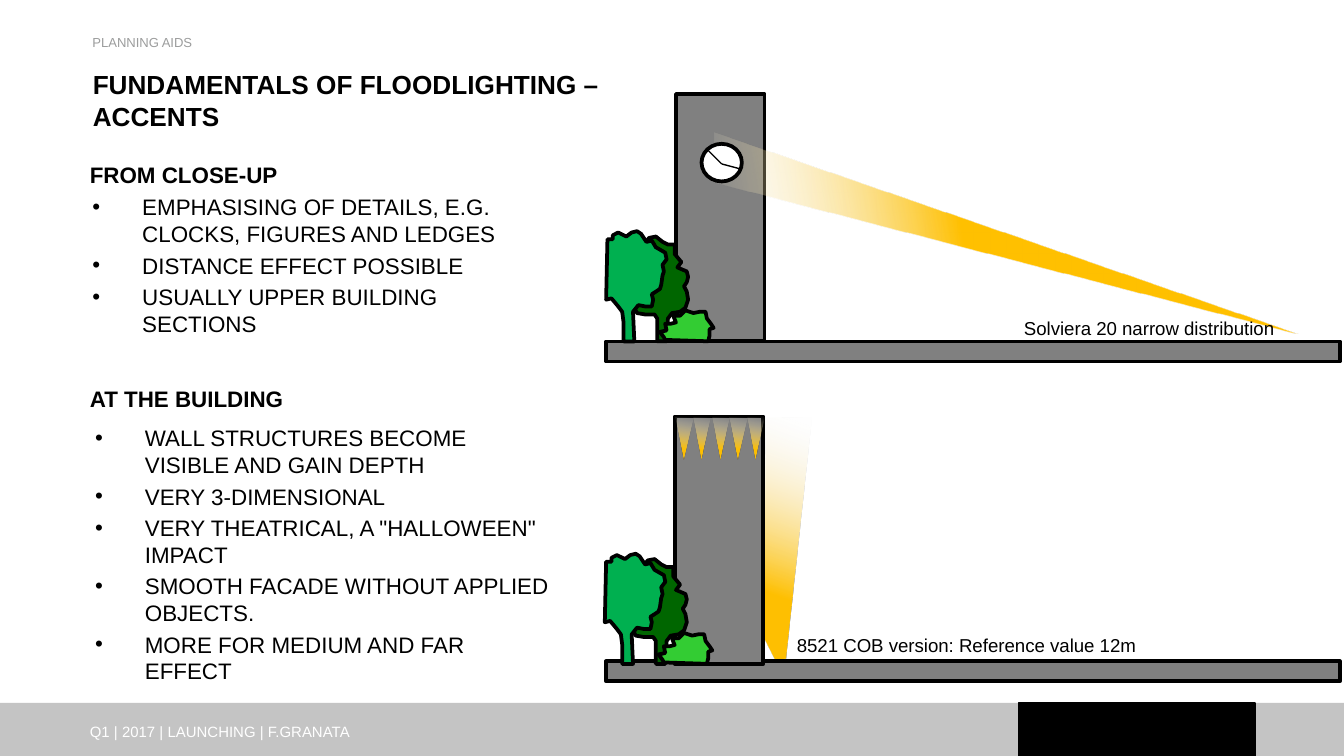
"""Build a slide on floodlighting accents with two lit tower scenes."""
from lxml.etree import SubElement
from pptx import Presentation
from pptx.dml.color import RGBColor
from pptx.enum.shapes import MSO_CONNECTOR, MSO_SHAPE
from pptx.enum.text import MSO_ANCHOR, PP_ALIGN
from pptx.oxml.ns import qn
from pptx.util import Inches, Pt

BLACK = RGBColor(0x00, 0x00, 0x00)
WHITE = RGBColor(0xFF, 0xFF, 0xFF)
FOOTER_GREY = RGBColor(0xC4, 0xC4, 0xC4)
HEADER_GREY = RGBColor(0x9C, 0x9D, 0x9D)
STONE = RGBColor(0x80, 0x80, 0x80)
DARK_GREEN = RGBColor(0x00, 0x66, 0x00)
BUSH_GREEN = RGBColor(0x33, 0xCC, 0x33)
TREE_GREEN = RGBColor(0x00, 0xB0, 0x50)
GOLD = RGBColor(0xFF, 0xC0, 0x00)
HAZE = RGBColor(0xF2, 0xF2, 0xF2)
HUNDREDTH = Inches(0.01)

DARK_TREE = [
    (496, 254), (497, 237), (500, 233), (506, 232), (510, 229), (512, 223),
    (511, 217), (509, 213), (511, 210), (512, 206), (511, 202), (504, 199),
    (507, 195), (502, 189), (502, 182), (497, 182), (493, 180), (488, 176),
    (483, 177), (478, 183), (469, 187), (466, 196), (467, 205), (463, 208),
    (468, 222), (474, 233), (480, 234), (487, 234), (489, 237), (489, 254),
]
BUSH = [
    (527, 254), (528, 250), (528, 245), (531, 244), (529, 241), (526, 237),
    (525, 232), (521, 232), (516, 233), (510, 231), (506, 235), (501, 235),
    (503, 240), (499, 241), (495, 241), (496, 246), (491, 247), (494, 251),
    (495, 253),
]
LIGHT_TREE = [
    (464, 254), (472, 254), (471, 232), (475, 227), (480, 228), (485, 228),
    (486, 223), (485, 219), (491, 215), (492, 212), (493, 205), (494, 202),
    (493, 197), (496, 193), (495, 188), (488, 184), (485, 179), (481, 180),
    (477, 174), (474, 172), (470, 173), (466, 176), (460, 173), (456, 175),
    (456, 178), (452, 178), (451, 223), (455, 222), (460, 228), (463, 232),
    (464, 240),
]

prs = Presentation()
prs.slide_width, prs.slide_height = Inches(10), Inches(10 * 9 / 16)
slide = prs.slides.add_slide(prs.slide_layouts[5])
shapes = slide.shapes


def paint(shape, color, line_width=2):
    shape.shadow.inherit = False
    shape.fill.solid()
    shape.fill.fore_color.rgb = color
    if line_width:
        shape.line.color.rgb = BLACK
        shape.line.width = Pt(line_width)
    else:
        shape.line.fill.background()


def add_beam(points, gold_end, angle):
    builder = shapes.build_freeform(*points[0], scale=HUNDREDTH)
    builder.add_line_segments(points[1:])
    beam = builder.convert_to_shape()
    beam.shadow.inherit = False
    beam.line.fill.background()
    beam.fill.gradient()
    beam.fill.gradient_angle = angle
    for stop, color, position in zip(beam.fill.gradient_stops, (GOLD, HAZE), (gold_end, 1)):
        stop.color.rgb = color
        stop.position = position
    haze = beam._element.spPr.findall(".//" + qn("a:srgbClr"))[-1]
    SubElement(haze, qn("a:alpha")).set("val", "0")


footer_band = shapes.add_shape(
    MSO_SHAPE.RECTANGLE, Inches(0), Inches(5.23), Inches(10), Inches(0.42))
paint(footer_band, FOOTER_GREY, 0)
footer_block = shapes.add_shape(
    MSO_SHAPE.RECTANGLE, Inches(7.58), Inches(5.23), Inches(1.76), Inches(0.4))
paint(footer_block, BLACK, 0.75)

add_beam([(577, 491), (585, 490), (604, 311), (570, 311), (569, 475)], 0.26, 70)

for shift_x, shift_y, ground_top in [(-1, 240, 4.92), (0, 0, 2.54)]:
    ground = shapes.add_shape(
        MSO_SHAPE.RECTANGLE, Inches(4.51), Inches(ground_top), Inches(5.46), Inches(0.15))
    paint(ground, STONE)
    tower = shapes.add_shape(
        MSO_SHAPE.RECTANGLE, Inches(5.03) + shift_x * HUNDREDTH,
        Inches(0.7) + shift_y * HUNDREDTH, Inches(0.66), Inches(1.84))
    paint(tower, STONE)
    for outline, green in [
        (DARK_TREE, DARK_GREEN), (BUSH, BUSH_GREEN), (LIGHT_TREE, TREE_GREEN),
    ]:
        moved = [(x + shift_x, y + shift_y) for x, y in outline]
        builder = shapes.build_freeform(*moved[0], scale=HUNDREDTH)
        builder.add_line_segments(moved[1:])
        paint(builder.convert_to_shape(), green)

add_beam([(966, 248), (532, 136), (532, 99)], 0.57, 190)
for cone in range(5):
    left = round(503 + 13.25 * cone)
    add_beam([(left + 6, 342), (left, 311), (left + 13, 311)], 0.26, 80)

clock = shapes.add_shape(
    MSO_SHAPE.OVAL, Inches(5.22), Inches(1.07), Inches(0.3), Inches(0.28))
paint(clock, WHITE)
for tip_x, tip_y in [(5.52, 1.26), (5.26, 1.11)]:
    hand = shapes.add_connector(
        MSO_CONNECTOR.STRAIGHT, Inches(5.37), Inches(1.22), Inches(tip_x), Inches(tip_y))
    hand.line.color.rgb = BLACK
    hand.line.width = Pt(0.75)
    SubElement(hand._element.spPr, qn("a:effectLst"))

title = shapes.title
title.left, title.top = Inches(0.59), Inches(0.46)
title.width, title.height = Inches(8.74), Inches(0.94)
title.text_frame.word_wrap = True
title.text_frame.vertical_anchor = MSO_ANCHOR.TOP
heading = title.text_frame.paragraphs[0]
heading.alignment = PP_ALIGN.LEFT
for position, words in enumerate(["FUNDAMENTALS OF FLOODLIGHTING –", "ACCENTS"]):
    if position:
        heading.add_line_break()
    run = heading.add_run()
    run.text = words
    run.font.name, run.font.size, run.font.bold = "Arial", Pt(14), True
    run.font.color.rgb = BLACK

for left, top, width, height, size, color, bold, words in [
    (0.57, 5.33, 2.85, 0.16, 8, WHITE, False, "Q1 | 2017 | LAUNCHING | F.GRANATA"),
    (0.59, 0.21, 8.74, 0.24, 7, HEADER_GREY, False, "PLANNING AIDS"),
    (0.57, 1.15, 3.6, 0.3, 12, BLACK, True, "FROM CLOSE-UP"),
    (0.57, 2.82, 3.6, 0.3, 12, BLACK, True, "AT THE BUILDING"),
    (7.52, 2.31, 2.28, 0.27, 10, BLACK, False, "Solviera 20 narrow distribution"),
    (5.83, 4.67, 3.19, 0.27, 10, BLACK, False, "8521 COB version: Reference value 12m"),
]:
    label = shapes.add_textbox(Inches(left), Inches(top), Inches(width), Inches(height))
    label.text_frame.word_wrap = True
    run = label.text_frame.paragraphs[0].add_run()
    run.text = words
    run.font.name, run.font.size, run.font.bold = "Arial", Pt(size), bold
    run.font.color.rgb = color

for left, top, width, height, points in [
    (0.59, 1.39, 3.63, 1.23, [
        "Emphasising of details, e.g. clocks, figures and ledges",
        "Distance effect possible",
        "Usually upper building sections",
    ]),
    (0.61, 3.11, 3.6, 1.67, [
        "Wall structures become visible and gain depth",
        "Very 3-dimensional",
        'Very theatrical, a "Halloween" impact',
        "Smooth facade without applied objects.",
        "More for medium and far effect",
    ]),
]:
    effects = shapes.add_textbox(Inches(left), Inches(top), Inches(width), Inches(height))
    effects.text_frame.word_wrap = True
    for position, words in enumerate(points):
        if position:
            effect = effects.text_frame.add_paragraph()
            effect.space_before = Pt(2.4)
        else:
            effect = effects.text_frame.paragraphs[0]
        properties = effect._p.get_or_add_pPr()
        properties.set("marL", str(Inches(0.37)))
        properties.set("indent", str(-Inches(0.37)))
        SubElement(properties, qn("a:buFont")).set("typeface", "Arial")
        SubElement(properties, qn("a:buChar")).set("char", "•")
        run = effect.add_run()
        run.text = words
        run.font.name, run.font.size = "Arial", Pt(12)
        run.font.color.rgb = BLACK
        run._r.get_or_add_rPr().set("cap", "all")

prs.save("out.pptx")
